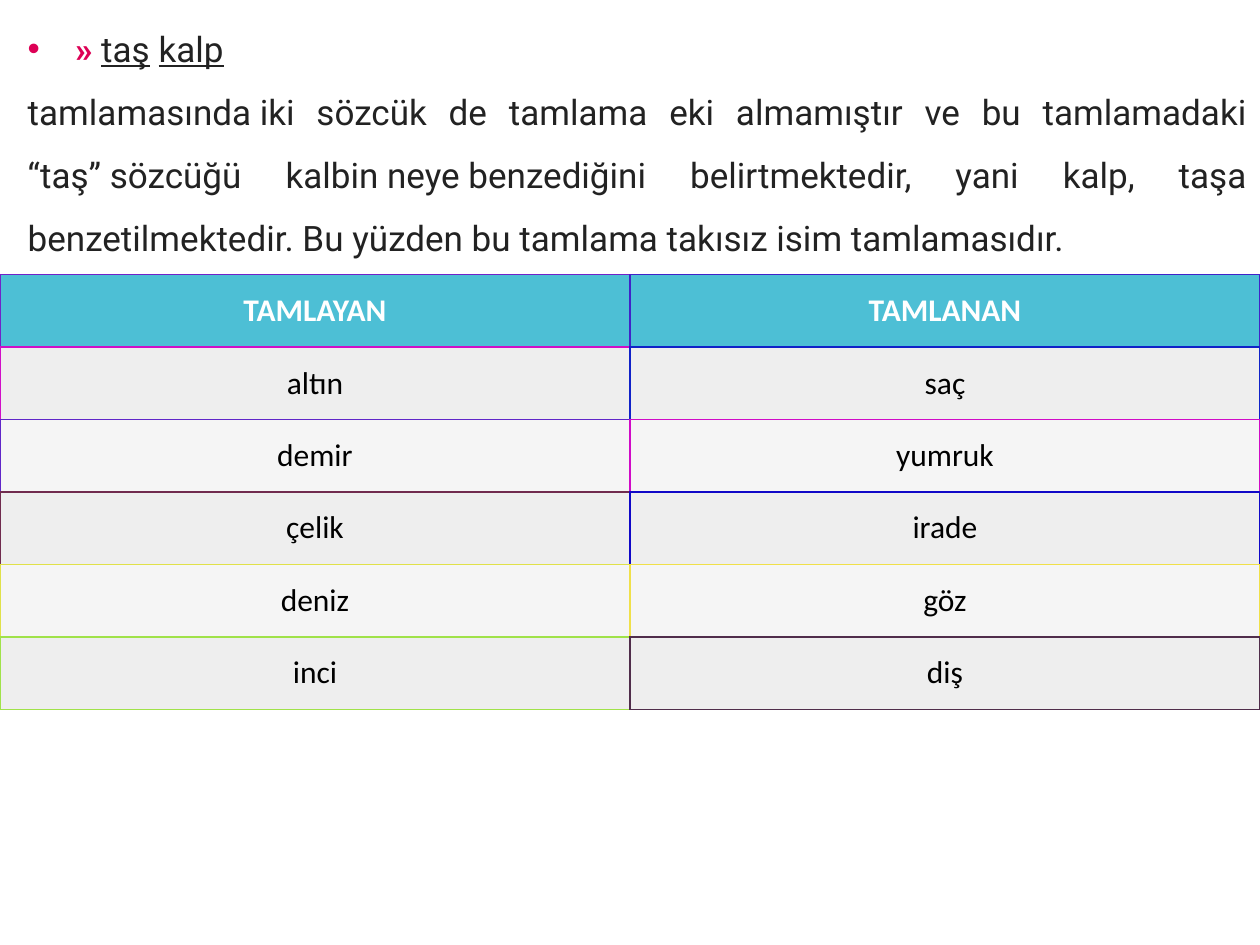
from dataclasses import dataclass

from lxml import etree
from pptx import Presentation
from pptx import util as u
from pptx.dml.color import RGBColor
from pptx.enum import text
from pptx.oxml import ns

WIDTH, HEIGHT = u.Inches(10), u.Inches(7.5)
TABLE_TOP, ROW_HEIGHT = u.Inches(2.18), u.Inches(3.45 / 6)
CELL_INSET = u.Inches(0.08)

PINK = RGBColor(0xDD, 0x00, 0x55)
INK = RGBColor(0x22, 0x22, 0x22)
BLACK = RGBColor(0x00, 0x00, 0x00)
WHITE = RGBColor(0xFF, 0xFF, 0xFF)
TEAL = RGBColor(0x4D, 0xBF, 0xD5)
BANDS = (RGBColor(0xF5, 0xF5, 0xF5), RGBColor(0xEE, 0xEE, 0xEE))

NB = chr(160)  # no-break space: keeps its width in justified lines


@dataclass(frozen=True)
class Entry:
    word: str
    border: RGBColor


PAIRS = (
    (Entry("TAMLAYAN", RGBColor(0x70, 0x22, 0xC8)), Entry("TAMLANAN", RGBColor(0x40, 0x22, 0xC8))),
    (Entry("altın", RGBColor(0xD0, 0x0E, 0xC7)), Entry("saç", RGBColor(0x10, 0x22, 0xC8))),
    (Entry("demir", RGBColor(0x60, 0x26, 0xC8)), Entry("yumruk", RGBColor(0xD0, 0x0B, 0xC7))),
    (Entry("çelik", RGBColor(0x70, 0x2B, 0x4E)), Entry("irade", RGBColor(0x10, 0x08, 0xC7))),
    (Entry("deniz", RGBColor(0xE0, 0xE1, 0x49)), Entry("göz", RGBColor(0xF0, 0xE0, 0x49))),
    (Entry("inci", RGBColor(0xA0, 0xE2, 0x49)), Entry("diş", RGBColor(0x50, 0x2D, 0x4B))),
)
EXPLANATION = (
    f"tamlamasında{NB}iki sözcük de tamlama eki almamıştır ve bu tamlamadaki "
    f"“taş”{NB}sözcüğü kalbin{NB}neye{NB}benzediğini belirtmektedir, yani kalp, "
    "taşa benzetilmektedir. Bu yüzden bu tamlama takısız isim tamlamasıdır."
)


def apply(target, values: dict) -> None:
    for name, value in values.items():
        setattr(target, name, value)


def add_run(paragraph, words: str, color: RGBColor, **font) -> None:
    run = paragraph.add_run()
    run.text = words
    apply(run.font, font)
    run.font.color.rgb = color


def write_body(body) -> None:
    apply(body, dict(left=u.Inches(0.12), top=0, width=u.Inches(9.88), height=u.Inches(6.7)))
    frame = body.text_frame
    apply(frame, dict(auto_size=text.MSO_AUTO_SIZE.NONE, word_wrap=True))
    example, explanation = frame.paragraphs[0], frame.add_paragraph()
    for paragraph in (example, explanation):
        apply(paragraph, dict(line_spacing=1.5, space_before=u.Pt(0)))

    roboto = dict(name="Roboto", size=u.Pt(20))
    add_run(example, "»" + NB, PINK, bold=True, **roboto)
    for words, underline in (("taş", True), (NB, False), ("kalp", True)):
        add_run(example, words, INK, underline=underline, **roboto)

    explanation.alignment = text.PP_ALIGN.JUSTIFY
    properties = explanation._p.get_or_add_pPr()
    properties.set("marL", "0")
    properties.set("indent", "0")
    etree.SubElement(properties, ns.qn("a:buNone"))
    add_run(explanation, EXPLANATION, INK, **roboto)


def draw_borders(cell, row: int, column: int) -> None:
    """Left and top take the cell's own colour, right and bottom the next cell's."""
    own = PAIRS[row][column].border
    last_row, last_column = row == len(PAIRS) - 1, column == len(PAIRS[0]) - 1
    right = own if last_column else PAIRS[row][column + 1].border
    bottom = own if last_row else PAIRS[row + 1][column].border
    sides = (
        ("a:lnL", own, 1),
        ("a:lnR", right, 0.75 if last_column else 1),
        ("a:lnT", own, 1),
        ("a:lnB", bottom, 0.75 if last_row else 1),
    )
    properties = cell._tc.get_or_add_tcPr()
    for position, (tag, color, points) in enumerate(sides):
        line = etree.Element(ns.qn(tag), w=str(u.Pt(points)))
        fill = etree.SubElement(line, ns.qn("a:solidFill"))
        etree.SubElement(fill, ns.qn("a:srgbClr"), val=str(color))
        properties.insert(position, line)


def fill_cell(cell, row: int, column: int) -> None:
    header = row == 0
    apply(cell, dict.fromkeys(("margin_left", "margin_right", "margin_top", "margin_bottom"), CELL_INSET))
    cell.vertical_anchor = text.MSO_ANCHOR.MIDDLE
    cell.fill.solid()
    cell.fill.fore_color.rgb = TEAL if header else BANDS[row % 2]
    paragraph = cell.text_frame.paragraphs[0]
    paragraph.alignment = text.PP_ALIGN.CENTER
    add_run(paragraph, PAIRS[row][column].word, WHITE if header else BLACK,
            name="Calibri", size=u.Pt(18), bold=header)
    draw_borders(cell, row, column)


def add_word_table(slide) -> None:
    rows, columns = len(PAIRS), len(PAIRS[0])
    words = slide.shapes.add_table(rows, columns, 0, TABLE_TOP, WIDTH, ROW_HEIGHT * rows).table
    for row in range(rows):
        words.rows[row].height = ROW_HEIGHT
        for column in range(columns):
            fill_cell(words.cell(row, column), row, column)


def main() -> None:
    deck = Presentation()
    apply(deck, dict(slide_width=WIDTH, slide_height=HEIGHT))
    slide = deck.slides.add_slide(deck.slide_layouts[1])
    title = slide.shapes.title._element
    title.getparent().remove(title)
    write_body(slide.placeholders[1])
    add_word_table(slide)
    deck.save("out.pptx")


if __name__ == "__main__":
    main()
